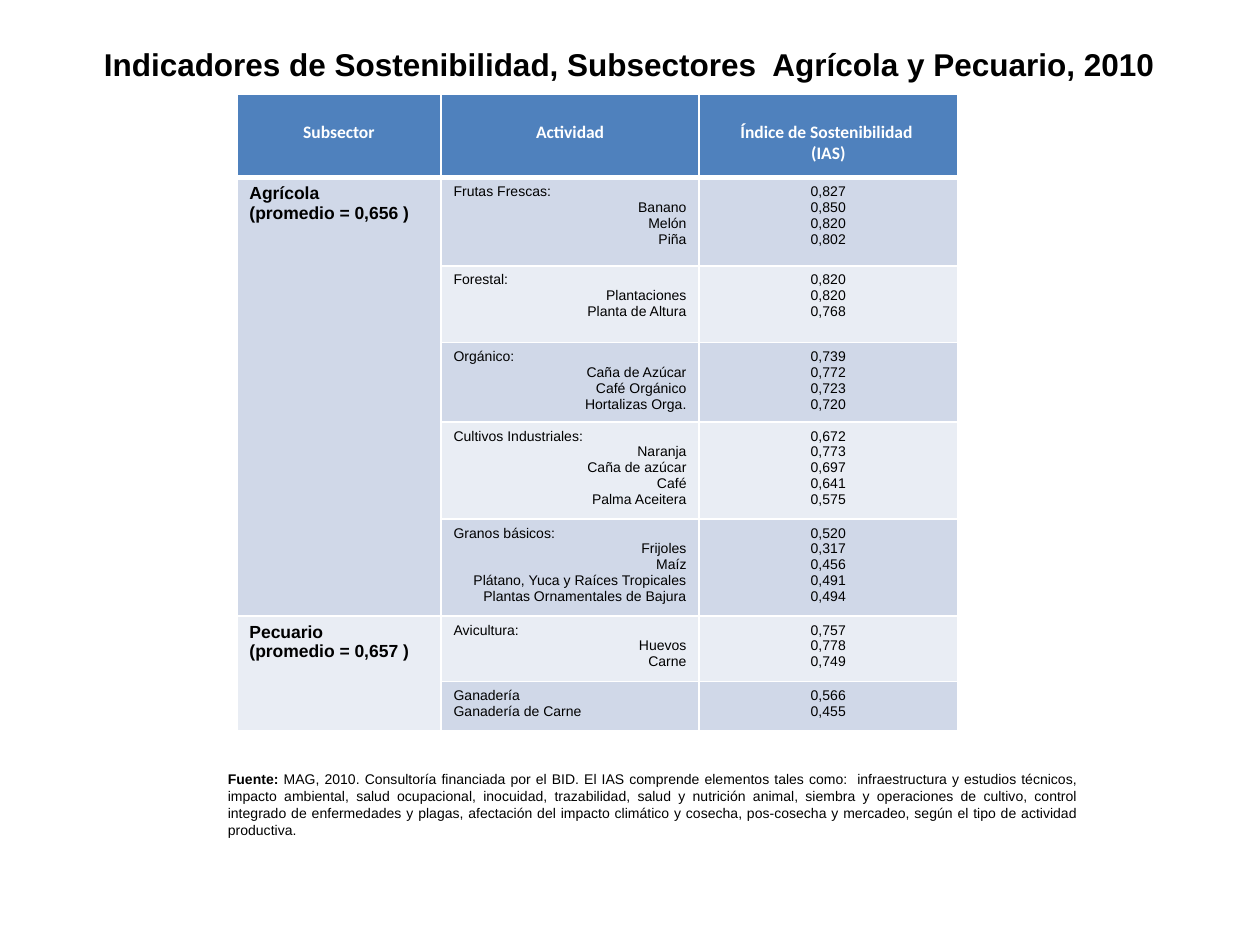
from pptx import Presentation
from pptx.dml.color import RGBColor
from pptx.enum.text import MSO_ANCHOR, PP_ALIGN as AL
from pptx.oxml.ns import qn
from pptx.util import Inches, Pt
from lxml.etree import SubElement

COLORS = {
    "text": "000000",
    "white": "FFFFFF",
    "header": "4F81BD",
    "band_dark": "D0D8E8",
    "band_light": "E9EDF4",
}
COL_WIDTHS = [1.62, 2.05, 2.05]
ROW_HEIGHTS = [0.66, 0.7, 0.61, 0.63, 0.77, 0.77, 0.52, 0.39]
HEADERS = [["Subsector"], ["Actividad"], ["Índice de Sostenibilidad ", "(IAS)"]]

# Subsector, average, then its groups: activities and their indices
SUBSECTORS = [
    ("Agrícola", "0,656", [
        (["Frutas Frescas:", "Banano", "Melón", "Piña"],
         ["0,827", "0,850", "0,820", "0,802"]),
        (["Forestal:", "Plantaciones", "Planta de Altura"],
         ["0,820", "0,820", "0,768"]),
        (["Orgánico:", "Caña de Azúcar", "Café Orgánico", "Hortalizas Orga."],
         ["0,739", "0,772", "0,723", "0,720"]),
        (["Cultivos Industriales:", "Naranja", "Caña de azúcar", "Café",
          "Palma Aceitera"],
         ["0,672", "0,773", "0,697", "0,641", "0,575"]),
        (["Granos básicos:", "Frijoles", "Maíz",
          "Plátano, Yuca y Raíces Tropicales",
          "Plantas Ornamentales de Bajura"],
         ["0,520", "0,317", "0,456", "0,491", "0,494"]),
    ]),
    ("Pecuario", "0,657", [
        (["Avicultura:", "Huevos", "Carne"], ["0,757", "0,778", "0,749"]),
        (["Ganadería", "Ganadería de Carne"], ["0,566", "0,455"]),
    ]),
]
SOURCE = (
    "MAG, 2010. Consultoría financiada por el BID. El IAS comprende elementos "
    "tales como:  infraestructura y estudios técnicos, impacto ambiental, salud "
    "ocupacional, inocuidad, trazabilidad, salud y nutrición animal, siembra y "
    "operaciones de cultivo, control integrado de enfermedades y plagas, "
    "afectación del impacto climático y cosecha, pos-cosecha y mercadeo, según "
    "el tipo de actividad productiva."
)


def rgb(name):
    return RGBColor.from_string(COLORS[name])


def add_run(p, text, size=8, bold=False, color="text", font="Arial"):
    r = p.add_run()
    r.text = text
    r.font.size, r.font.bold, r.font.name = Pt(size), bold, font
    r.font.color.rgb = rgb(color)


def write(tf, lines, align=AL.LEFT, rest=None, **fmt):
    """Write one paragraph per line; rest aligns those after the first."""
    for i, line in enumerate(lines):
        p = tf.add_paragraph() if i else tf.paragraphs[0]
        p.alignment = rest if i and rest is not None else align
        add_run(p, line, **fmt)


class Deck:
    def __init__(self):
        self.prs = Presentation()
        self.prs.slide_width, self.prs.slide_height = Inches(10), Inches(7.5)
        self.s = self.prs.slides.add_slide(self.prs.slide_layouts[5])

    def title(self, text, x, y, w, h):
        sp = self.s.shapes.title
        sp.left, sp.top, sp.width, sp.height = map(Inches, (x, y, w, h))
        sp.text_frame.vertical_anchor = MSO_ANCHOR.MIDDLE
        write(sp.text_frame, [text], AL.CENTER, size=18, bold=True)

    def source_note(self, label, text, x, y, w, h):
        tf = self.s.shapes.add_textbox(*map(Inches, (x, y, w, h))).text_frame
        tf.word_wrap = True
        p = tf.paragraphs[0]
        p.alignment = AL.JUSTIFY
        add_run(p, label, bold=True)
        add_run(p, text)

    def table(self, x, y, widths, heights):
        box = map(Inches, (x, y, sum(widths), sum(heights)))
        tbl = self.s.shapes.add_table(len(heights), len(widths), *box).table
        for col, w in zip(tbl.columns, widths):
            col.width = Inches(w)
        for row, h in zip(tbl.rows, heights):
            row.height = Inches(h)
        return tbl

    def style_cell(self, cell, fill, top=1, bottom=1):
        tcPr = cell._tc.get_or_add_tcPr()
        for side, width in zip("LRTB", (1, 1, top, bottom)):
            ln = SubElement(tcPr, qn(f"a:ln{side}"), w=str(Pt(width)))
            line_fill = SubElement(ln, qn("a:solidFill"))
            SubElement(line_fill, qn("a:srgbClr"), val=COLORS["white"])
        cell.fill.solid()
        cell.fill.fore_color.rgb = rgb(fill)


def main():
    deck = Deck()
    deck.title("Indicadores de Sostenibilidad, Subsectores  Agrícola y Pecuario, 2010",
               0.33, 0.26, 9.33, 0.49)

    # Header row
    tbl = deck.table(1.88, 0.75, COL_WIDTHS, ROW_HEIGHTS)
    for c, lines in enumerate(HEADERS):
        cell = tbl.cell(0, c)
        deck.style_cell(cell, "header", bottom=3)
        cell.margin_top = Inches(0.22)
        write(cell.text_frame, lines, AL.CENTER, size=10, bold=True,
              color="white", font="Calibri")

    # Banded rows, with each subsector merged over its groups
    row = 1
    for name, average, groups in SUBSECTORS:
        first = row
        for activities, indices in groups:
            band = "band_dark" if row % 2 else "band_light"
            for c in range(len(COL_WIDTHS)):
                deck.style_cell(tbl.cell(row, c), band, top=3 if row == 1 else 1)
            rest = AL.RIGHT if activities[0].endswith(":") else AL.LEFT
            write(tbl.cell(row, 1).text_frame, activities, rest=rest)
            write(tbl.cell(row, 2).text_frame, indices, AL.CENTER)
            row += 1
        tbl.cell(first, 0).merge(tbl.cell(row - 1, 0))
        write(tbl.cell(first, 0).text_frame,
              [name, f"(promedio = {average} )"], size=10, bold=True)

    # Source note
    deck.source_note("Fuente: ", SOURCE, 1.71, 6.07, 6.95, 0.64)
    deck.prs.save("out.pptx")


if __name__ == "__main__":
    main()
